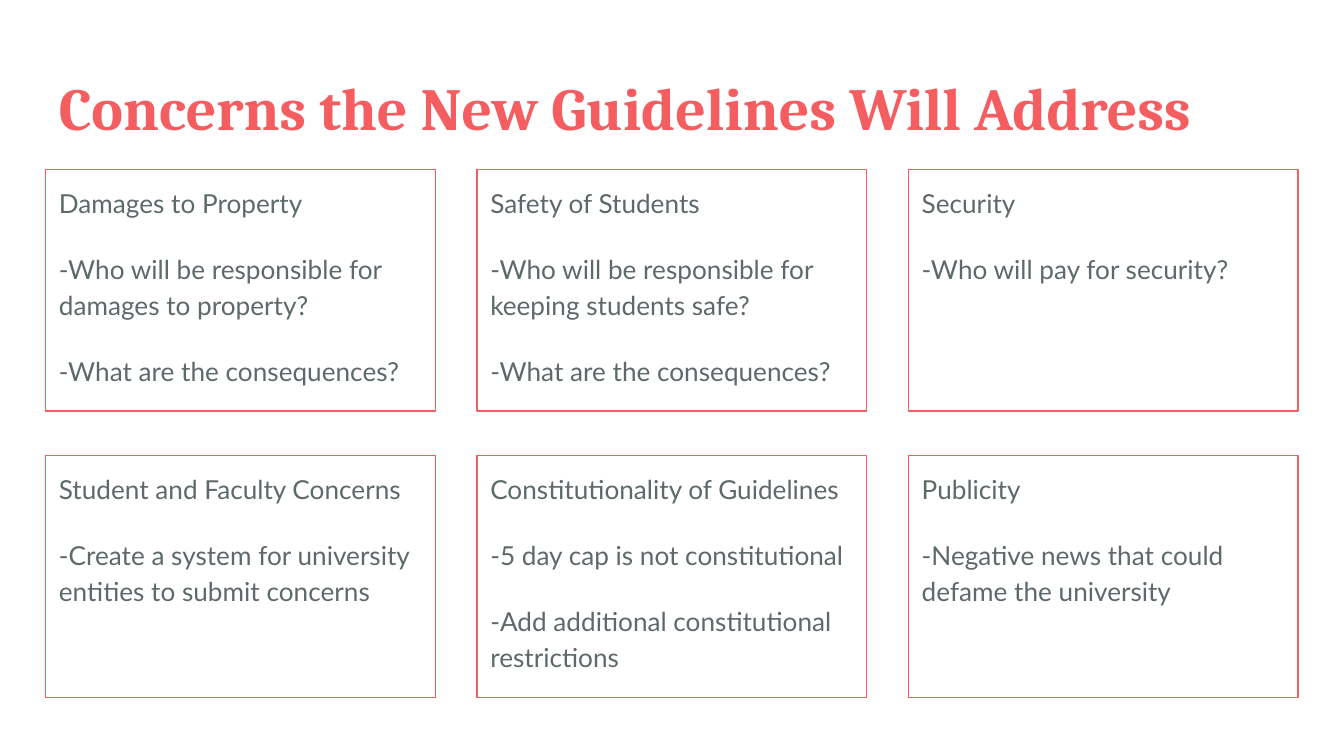
from pptx import Presentation
from pptx.dml.color import RGBColor
from pptx.enum.shapes import MSO_SHAPE as Shape
from pptx.enum.text import MSO_ANCHOR as Anchor, PP_ALIGN as Align
from pptx.util import Inches, Pt

CORAL = RGBColor(0xF5, 0x5E, 0x61)
SLATE = RGBColor(0x5E, 0x69, 0x6C)

WIDE = 10
HIGH = WIDE * 9 / 16
LEFT, TOP = 0.34, 1.26
CARD_W, CARD_H = 2.9, 1.8
COLS = 3
COL_STEP = (WIDE - 2 * LEFT - CARD_W) / (COLS - 1)
ROW_STEP = 2.13
INSET = 0.1

CARDS = [
    ("Damages to Property",
     "-Who will be responsible for damages to property?",
     "-What are the consequences?"),
    ("Safety of Students",
     "-Who will be responsible for keeping students safe?",
     "-What are the consequences?"),
    ("Security",
     "-Who will pay for security?"),
    ("Student and Faculty Concerns",
     "-Create a system for university entities to submit concerns"),
    ("Constitutionality of Guidelines",
     "-5 day cap is not constitutional",
     "-Add additional constitutional restrictions"),
    ("Publicity",
     "-Negative news that could defame the university"),
]


def write(shape, lines, font="Lato", size=14, color=SLATE, bold=False,
          spacing=1.0, gap=0):
    """Fill a shape with one paragraph per line, gap points apart."""
    frame = shape.text_frame
    frame.word_wrap = True
    frame.vertical_anchor = Anchor.TOP
    frame.margin_left = frame.margin_right = Inches(INSET)
    frame.margin_top = frame.margin_bottom = Inches(INSET)
    for i, line in enumerate(lines):
        para = frame.add_paragraph() if i else frame.paragraphs[0]
        para.alignment = Align.LEFT
        para.line_spacing = spacing
        para.space_before = Pt(gap if i else 0)
        run = para.add_run()
        run.text = line
        run.font.name = font
        run.font.size = Pt(size)
        run.font.bold = bold
        run.font.color.rgb = color


def add_title(slide, text):
    box = slide.shapes.add_textbox(
        Inches(LEFT), Inches(0.43), Inches(WIDE - 2 * LEFT), Inches(0.68))
    write(box, [text], font="Cambria", size=32, color=CORAL, bold=True)


def add_card(slide, col, row, lines):
    card = slide.shapes.add_shape(
        Shape.RECTANGLE,
        Inches(LEFT + col * COL_STEP), Inches(TOP + row * ROW_STEP),
        Inches(CARD_W), Inches(CARD_H))
    card.shadow.inherit = False
    card.fill.background()
    card.line.color.rgb = CORAL
    card.line.width = Pt(0.75)
    write(card, lines, spacing=1.15, gap=16)


def main():
    deck = Presentation()
    deck.slide_width, deck.slide_height = Inches(WIDE), Inches(HIGH)
    slide = deck.slides.add_slide(deck.slide_layouts[6])
    add_title(slide, "Concerns the New Guidelines Will Address")
    for i, lines in enumerate(CARDS):
        row, col = divmod(i, COLS)
        add_card(slide, col, row, lines)
    deck.save("out.pptx")


if __name__ == "__main__":
    main()
